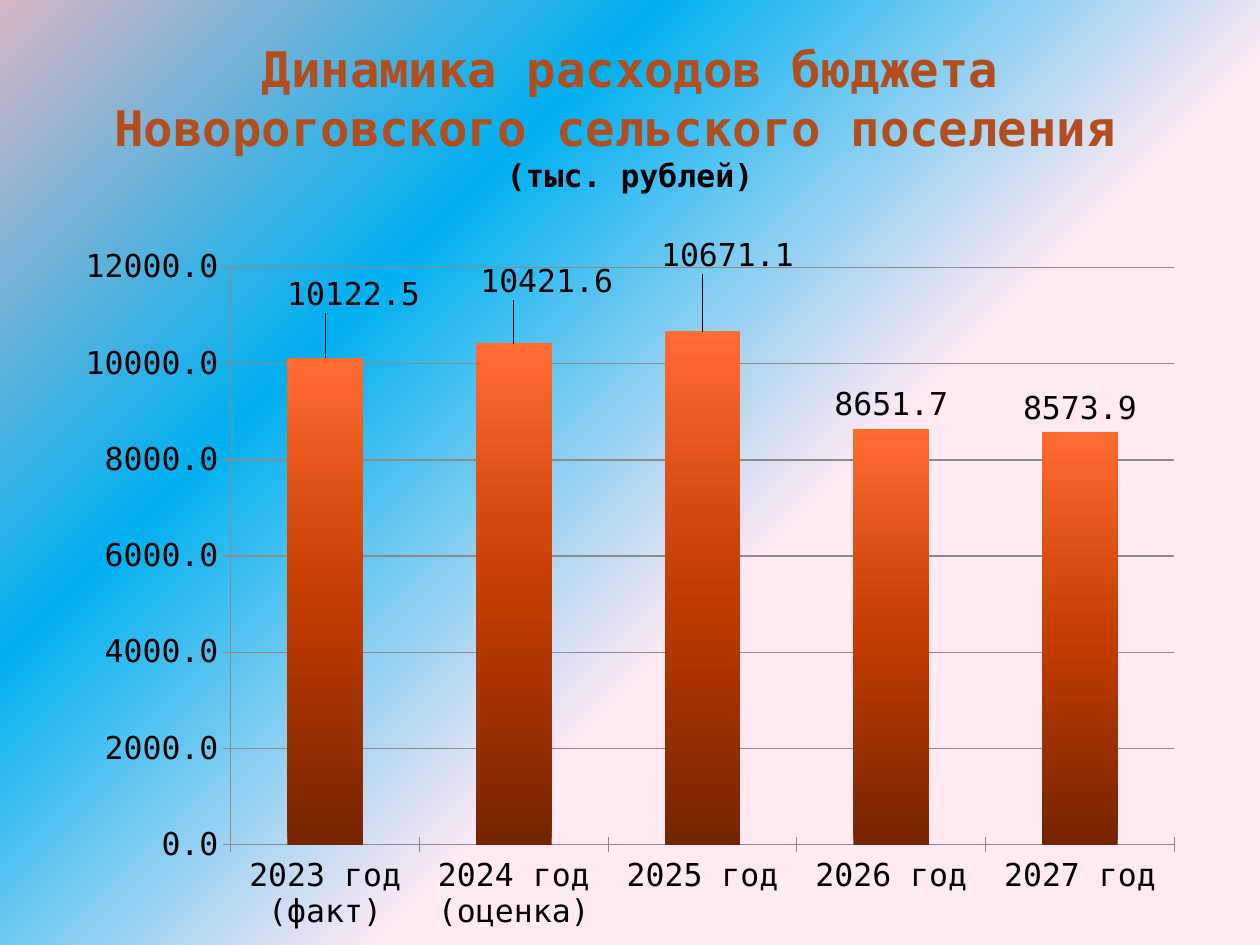
from dataclasses import dataclass

from lxml import etree
from pptx import Presentation
from pptx.chart.data import CategoryChartData
from pptx.dml.color import RGBColor
from pptx.enum.chart import XL_CHART_TYPE, XL_LABEL_POSITION, XL_TICK_MARK
from pptx.enum.text import MSO_ANCHOR, PP_ALIGN
from pptx.oxml import parse_xml
from pptx.oxml.ns import nsdecls, qn
from pptx.util import Inches, Pt

COLUMN = XL_CHART_TYPE.COLUMN_CLUSTERED
OUTSIDE_END = XL_LABEL_POSITION.OUTSIDE_END
CROSS = XL_TICK_MARK.CROSS
MIDDLE = MSO_ANCHOR.MIDDLE
CENTER = PP_ALIGN.CENTER


@dataclass(frozen=True)
class Theme:
    font: str = "DejaVu Sans Mono"
    title: RGBColor = RGBColor(0xB2, 0x4D, 0x1D)
    text: RGBColor = RGBColor(0, 0, 0)
    line: RGBColor = RGBColor(0x8B, 0x8B, 0x8B)
    title_size: Pt = Pt(28)
    text_size: Pt = Pt(18)
    background: tuple = ((40, "FFE9F3"), (70, "00B0F0"), (100, "D5B5C4"))
    bars: tuple = ((0, "752400"), (50, "C33C00"), (100, "FF6C31"))


THEME = Theme()
EXPENSES = {
    "2023 год (факт)": 10122.5,
    "2024 год (оценка)": 10421.6,
    "2025 год": 10671.1,
    "2026 год": 8651.7,
    "2027 год": 8573.9,
}
LABEL_SHIFTS = [(0.025, -0.056), (0.029, -0.054), (0.022, -0.073)]
PLOT_AREA = {"x": 0.148, "y": 0.045, "w": 0.832, "h": 0.814}
CORNER = (
    '<a:path path="circle"><a:fillToRect l="100000" t="100000"/></a:path>'
    '<a:tileRect r="-100000" b="-100000"/>'
)
UPWARD = '<a:lin ang="16200000" scaled="0"/>'


def gradient(stops, direction):
    gs = "".join(
        f'<a:gs pos="{pos * 1000}"><a:srgbClr val="{color}"/></a:gs>'
        for pos, color in stops
    )
    return parse_xml(
        f'<a:gradFill {nsdecls("a")} rotWithShape="1">'
        f"<a:gsLst>{gs}</a:gsLst>{direction}</a:gradFill>"
    )


def replace_fill(properties, fill):
    old = properties.find(qn("a:solidFill"))
    properties.replace(old, fill)


def manual_layout(values, inner=False):
    layout = parse_xml(f'<c:layout {nsdecls("c")}><c:manualLayout/></c:layout>')
    modes = {"layoutTarget": "inner", "xMode": "edge", "yMode": "edge"} if inner else {}
    for name, value in {**modes, **values}.items():
        etree.SubElement(layout[0], qn(f"c:{name}")).set("val", str(value))
    return layout


def set_background(slide):
    fill = slide.background.fill
    fill.solid()
    fill.fore_color.rgb = THEME.text
    bg_pr = slide.element.find(".//" + qn("p:bgPr"))
    replace_fill(bg_pr, gradient(THEME.background, CORNER))


def add_title(slide, left, top, width, height):
    sp = slide.shapes.title
    sp.left, sp.top, sp.width, sp.height = left, top, width, height
    tf = sp.text_frame
    tf.word_wrap = True
    tf.vertical_anchor = MIDDLE
    p = tf.paragraphs[0]
    p.alignment = CENTER
    p.font.name = THEME.font
    p.font.bold = True
    heading = p.add_run()
    heading.text = "Динамика расходов бюджета Новороговского сельского поселения "
    p.add_line_break()
    unit = p.add_run()
    unit.text = "(тыс. рублей)"
    for r, size, color in (
        (heading, THEME.title_size, THEME.title),
        (unit, THEME.text_size, THEME.text),
    ):
        r.font.size = size
        r.font.color.rgb = color


def style_font(font):
    font.name = THEME.font
    font.size = THEME.text_size
    font.color.rgb = THEME.text


def style_axes(chart):
    value_axis = chart.value_axis
    value_axis.minimum_scale = 0
    value_axis.maximum_scale = 12000
    value_axis.major_unit = 2000
    value_axis.has_major_gridlines = True
    value_axis.tick_labels.number_format = "0.0"
    value_axis.tick_labels.number_format_is_linked = False
    for axis in (value_axis, chart.category_axis):
        axis.major_tick_mark = CROSS
        axis.format.line.color.rgb = THEME.line
    value_axis.major_gridlines.format.line.color.rgb = THEME.line


def style_labels(series):
    labels = series.data_labels
    labels.show_value = True
    labels.number_format = "0.0"
    labels.number_format_is_linked = False
    labels.position = OUTSIDE_END
    style_font(labels.font)
    for i, (x, y) in enumerate(LABEL_SHIFTS):
        label = series.points[i].data_label
        style_font(label.font)
        label.position = OUTSIDE_END
    for d_lbl, (x, y) in zip(series.data_labels._element.findall(qn("c:dLbl")), LABEL_SHIFTS):
        d_lbl.insert(1, manual_layout({"x": x, "y": y}))


def add_expense_chart(slide, left, top, width, height):
    data = CategoryChartData(number_format="0.0")
    data.categories = list(EXPENSES)
    data.add_series("Series 1", list(EXPENSES.values()))
    chart = slide.shapes.add_chart(COLUMN, left, top, width, height, data).chart
    chart.has_legend = False
    chart.has_title = False
    style_font(chart.font)
    style_axes(chart)

    plot = chart.plots[0]
    plot.vary_by_categories = False
    plot.gap_width = 150
    series = plot.series[0]
    series.format.fill.solid()
    series.format.fill.fore_color.rgb = THEME.title
    sp_pr = series._element.find(qn("c:spPr"))
    replace_fill(sp_pr, gradient(THEME.bars, UPWARD))
    style_labels(series)

    plot_area = chart._chartSpace.find(".//" + qn("c:plotArea"))
    for old in plot_area.findall(qn("c:layout")):
        plot_area.remove(old)
    plot_area.insert(0, manual_layout(PLOT_AREA, inner=True))


def main():
    prs = Presentation()
    prs.slide_width, prs.slide_height = Inches(10), Inches(7.5)
    slide = prs.slides.add_slide(prs.slide_layouts[5])
    set_background(slide)
    add_expense_chart(slide, Inches(0.5), Inches(1.87), Inches(9), Inches(5.63))
    add_title(slide, Inches(0.5), Inches(0.3), Inches(9), Inches(1.25))
    prs.save("out.pptx")


if __name__ == "__main__":
    main()
